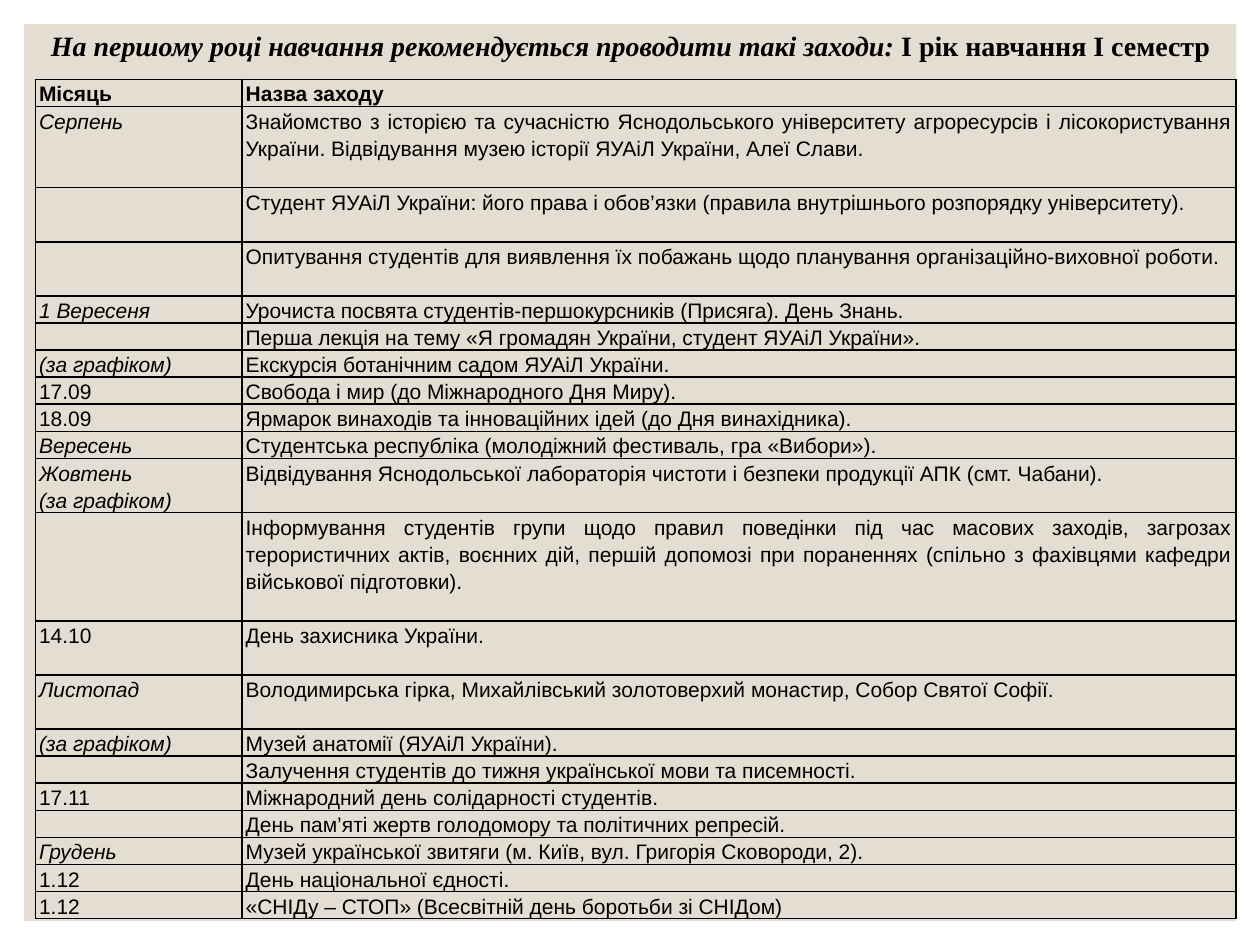
from typing import NamedTuple

from lxml.etree import SubElement
from pptx import Presentation
from pptx.dml.color import RGBColor
from pptx.enum.shapes import MSO_SHAPE
from pptx.enum.text import MSO_ANCHOR, PP_ALIGN
from pptx.oxml.ns import qn
from pptx.util import Inches, Pt

INK, SAND = "000000", "E3DED1"
TOTAL = 6.66  # table height, shared out by lines of text


class Event(NamedTuple):
    month: str
    name: str
    lines: int = 1
    anchor: MSO_ANCHOR = MSO_ANCHOR.TOP


MID = MSO_ANCHOR.MIDDLE
EVENTS = [
    Event("Місяць", "Назва заходу"),
    Event("Серпень", "Знайомство з історією та сучасністю Яснодольського університету "
          "агроресурсів і лісокористування України. Відвідування музею історії "
          "ЯУАіЛ України, Алеї Слави.", 3),
    Event("", "Студент ЯУАіЛ України: його права і обов’язки "
          "(правила внутрішнього розпорядку університету).", 2),
    Event("", "Опитування студентів для виявлення їх побажань щодо планування "
          "організаційно-виховної роботи.", 2),
    Event("1 Вересеня", "Урочиста посвята студентів-першокурсників (Присяга). День Знань."),
    Event("", "Перша лекція на тему «Я громадян України, студент ЯУАіЛ України»."),
    Event("(за графіком)", "Екскурсія ботанічним садом ЯУАіЛ України."),
    Event("17.09", "Свобода і мир (до Міжнародного Дня Миру).", 1, MID),
    Event("18.09", "Ярмарок винаходів та інноваційних ідей (до Дня винахідника).", 1, MID),
    Event("Вересень", "Студентська республіка (молодіжний фестиваль, гра «Вибори»).", 1, MID),
    Event("Жовтень\n(за графіком)", "Відвідування Яснодольської лабораторія чистоти і безпеки "
          "продукції АПК (смт. Чабани).", 2),
    Event("", "Інформування студентів групи щодо правил поведінки під час масових заходів, "
          "загрозах терористичних актів, воєнних дій, першій допомозі при пораненнях "
          "(спільно з фахівцями кафедри військової підготовки).", 4),
    Event("14.10", "День захисника України.", 2),
    Event("Листопад", "Володимирська гірка, Михайлівський золотоверхий монастир, "
          "Собор Святої Софії.", 2),
    Event("(за графіком)", "Музей анатомії (ЯУАіЛ України)."),
    Event("", "Залучення студентів до тижня української мови та писемності."),
    Event("17.11", "Міжнародний день солідарності студентів."),
    Event("", "День пам’яті жертв голодомору та політичних репресій."),
    Event("Грудень", "Музей української звитяги (м. Київ, вул. Григорія Сковороди, 2)."),
    Event("1.12", "День національної єдності."),
    Event("1.12", "«СНIДу – СТОП» (Всесвітній день боротьби зі СНІДом)"),
]


def paint(fill, color: str) -> None:
    fill.solid()
    fill.fore_color.rgb = RGBColor.from_string(color)


def write(para, text: str, *, size: float = 12, face: str = "Arial", bold: bool = False,
          italic: bool = False, align=PP_ALIGN.JUSTIFY, space: float = 1.15) -> None:
    para.alignment, para.line_spacing = align, space
    if not text:  # an empty cell keeps the small type size
        SubElement(para._p, qn("a:endParaRPr"), sz=str(size * 100))
        return
    run = para.add_run()
    run.text = text
    font = run.font
    font.size, font.name, font.bold, font.italic = Pt(size), face, bold, italic
    paint(font.fill, INK)


def border(cell) -> None:
    props = cell._tc.get_or_add_tcPr()
    for at, side in enumerate(("lnL", "lnR", "lnT", "lnB")):
        line = SubElement(props, qn(f"a:{side}"), w=str(Pt(1)))
        SubElement(SubElement(line, qn("a:solidFill")), qn("a:srgbClr"), val=INK)
        props.insert(at, line)


def fill_cell(cell, text: str, anchor=MSO_ANCHOR.TOP, **style) -> None:
    cell.fill.background()
    border(cell)
    cell.margin_left = cell.margin_right = Inches(0.03)
    cell.margin_top = cell.margin_bottom = 0
    cell.vertical_anchor = anchor
    frame = cell.text_frame
    for at, part in enumerate(text.split("\n")):
        write(frame.add_paragraph() if at else frame.paragraphs[0], part, **style)


def add_plan(slide, events: list[Event]) -> None:
    table = slide.shapes.add_table(len(events), 2, Inches(0.28), Inches(0.63),
                                   Inches(9.53), Inches(TOTAL)).table
    table.horz_banding = False
    for col, width in zip(table.columns, (1.64, 7.89)):
        col.width = Inches(width)
    step = TOTAL / sum(event.lines for event in events)
    for at, event in enumerate(events):
        table.rows[at].height = Inches(step * event.lines)
        head = at == 0
        # Months are italic, dates such as 17.09 are upright
        fill_cell(table.cell(at, 0), event.month, bold=head,
                  italic=not head and "." not in event.month)
        fill_cell(table.cell(at, 1), event.name, event.anchor, bold=head)


def add_title(slide) -> None:
    title = slide.shapes.title
    title.left, title.top = Inches(0.28), Inches(0.15)
    title.width, title.height = Inches(9.45), Inches(0.38)
    frame = title.text_frame
    frame.word_wrap, frame.vertical_anchor = True, MSO_ANCHOR.TOP
    style = dict(size=16, face="Times New Roman", bold=True,
                 align=PP_ALIGN.CENTER, space=1.1)
    para = frame.paragraphs[0]
    write(para, "На першому році навчання рекомендується проводити такі заходи: ",
          italic=True, **style)
    write(para, "І рік навчання І семестр", **style)


def main() -> None:
    deck = Presentation()
    deck.slide_width, deck.slide_height = Inches(10), Inches(7.5)
    slide = deck.slides.add_slide(deck.slide_layouts[5])

    # Sand panel, behind the title
    panel = slide.shapes.add_shape(MSO_SHAPE.RECTANGLE, Inches(0.19), Inches(0.19),
                                   Inches(9.62), Inches(7.12))
    panel.shadow.inherit = False
    paint(panel.fill, SAND)
    panel.line.fill.background()
    slide.shapes.title.element.addprevious(panel.element)

    add_plan(slide, EVENTS)
    add_title(slide)
    deck.save("out.pptx")


if __name__ == "__main__":
    main()
